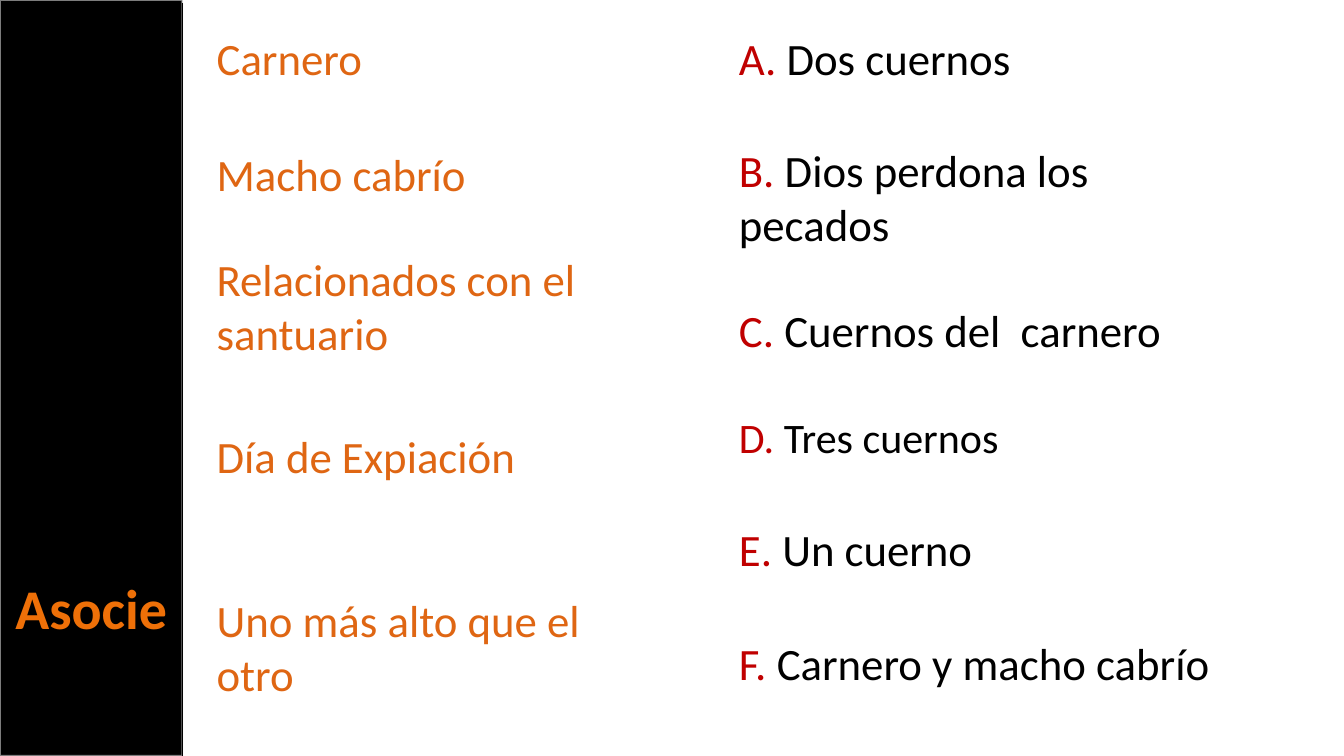
from dataclasses import dataclass

from lxml.etree import SubElement as Sub
from pptx import Presentation as Deck
from pptx.dml.color import RGBColor as Color
from pptx.enum.shapes import MSO_CONNECTOR as Link, MSO_SHAPE as Kind
from pptx.enum.text import MSO_AUTO_SIZE as Fit, PP_ALIGN as Align
from pptx.oxml.ns import qn
from pptx.util import Inches, Pt


@dataclass(frozen=True)
class Theme:
    font: str = "Calibri"
    black: str = "000000"
    edge: str = "F9F9F9"
    term: str = "DF6613"
    mark: str = "C00000"
    title: str = "EE7008"
    body: int = 32
    small: int = 30
    head: int = 40


class Board:
    def __init__(self, slide, theme):
        self.slide = slide
        self.theme = theme

    def panel(self, left, top, width, height):
        box = self.slide.shapes.add_shape(
            Kind.RECTANGLE, Inches(left), Inches(top), Inches(width), Inches(height))
        box.shadow.inherit = False
        box.fill.solid()
        box.fill.fore_color.rgb = Color.from_string(self.theme.black)
        box.line.color.rgb = Color.from_string(self.theme.edge)
        box.line.width = Pt(1.35)
        tint = box.line.fill._xPr.find(".//" + qn("a:srgbClr"))
        Sub(tint, qn("a:alpha"), val="50000")

    def text(self, left, top, width, height, runs, size, bold=False, align=Align.LEFT):
        box = self.slide.shapes.add_textbox(
            Inches(left), Inches(top), Inches(width), Inches(height))
        frame = box.text_frame
        frame.word_wrap = True
        frame.auto_size = Fit.SHAPE_TO_FIT_TEXT
        para = frame.paragraphs[0]
        para.alignment = align
        for words, color in runs:
            run = para.add_run()
            run.text = words
            run.font.name = self.theme.font
            run.font.size = Pt(size)
            run.font.bold = bold
            run.font.color.rgb = Color.from_string(color)

    def rule(self, left, top, right, bottom):
        line = self.slide.shapes.add_connector(
            Link.STRAIGHT, Inches(left), Inches(top), Inches(right), Inches(bottom))
        line.line.color.rgb = Color.from_string(self.theme.black)
        line.line.width = Pt(0.85)
        Sub(line._element.spPr, qn("a:effectLst"))


def main():
    deck = Deck()
    deck.slide_width, deck.slide_height = Inches(13.33), Inches(7.5)
    theme = Theme()
    board = Board(deck.slides.add_slide(deck.slide_layouts[6]), theme)
    side = 1.81
    one, two = 0.64, 1.18

    board.panel(0, 0, side, 7.5)

    terms = [
        ("Carnero", 0.26, 4.59, one),
        ("Macho cabrío", 1.41, 3.84, one),
        ("Relacionados con el santuario", 2.45, 4.13, two),
        ("Día de Expiación", 4.2, 4.39, one),
        ("Uno más alto que el otro", 5.83, 4.59, two),
    ]
    for words, top, width, height in terms:
        board.text(2.05, top, width, height, [(words, theme.term)], theme.body)

    picks = [
        ("A", "Dos cuernos", 0.26, 5, one, theme.body),
        ("B", "Dios perdona los pecados", 1.37, 4.53, two, theme.body),
        ("C", "Cuernos del  carnero", 2.95, 6.02, one, theme.body),
        ("D", "Tres cuernos", 4.03, 4.18, 0.61, theme.small),
        ("E", "Un cuerno", 5.13, 5.59, one, theme.body),
        ("F", "Carnero y macho cabrío", 6.26, 5.59, one, theme.body),
    ]
    for mark, words, top, width, height, size in picks:
        runs = [(f"{mark}. ", theme.mark), (words, theme.black)]
        board.text(7.23, top, width, height, runs, size)

    board.text(0, 5.64, side, 0.77, [("Asocie", theme.title)], theme.head,
               bold=True, align=Align.CENTER)
    board.rule(side, 0.03, side, 7.5)
    deck.save("out.pptx")


if __name__ == "__main__":
    main()
